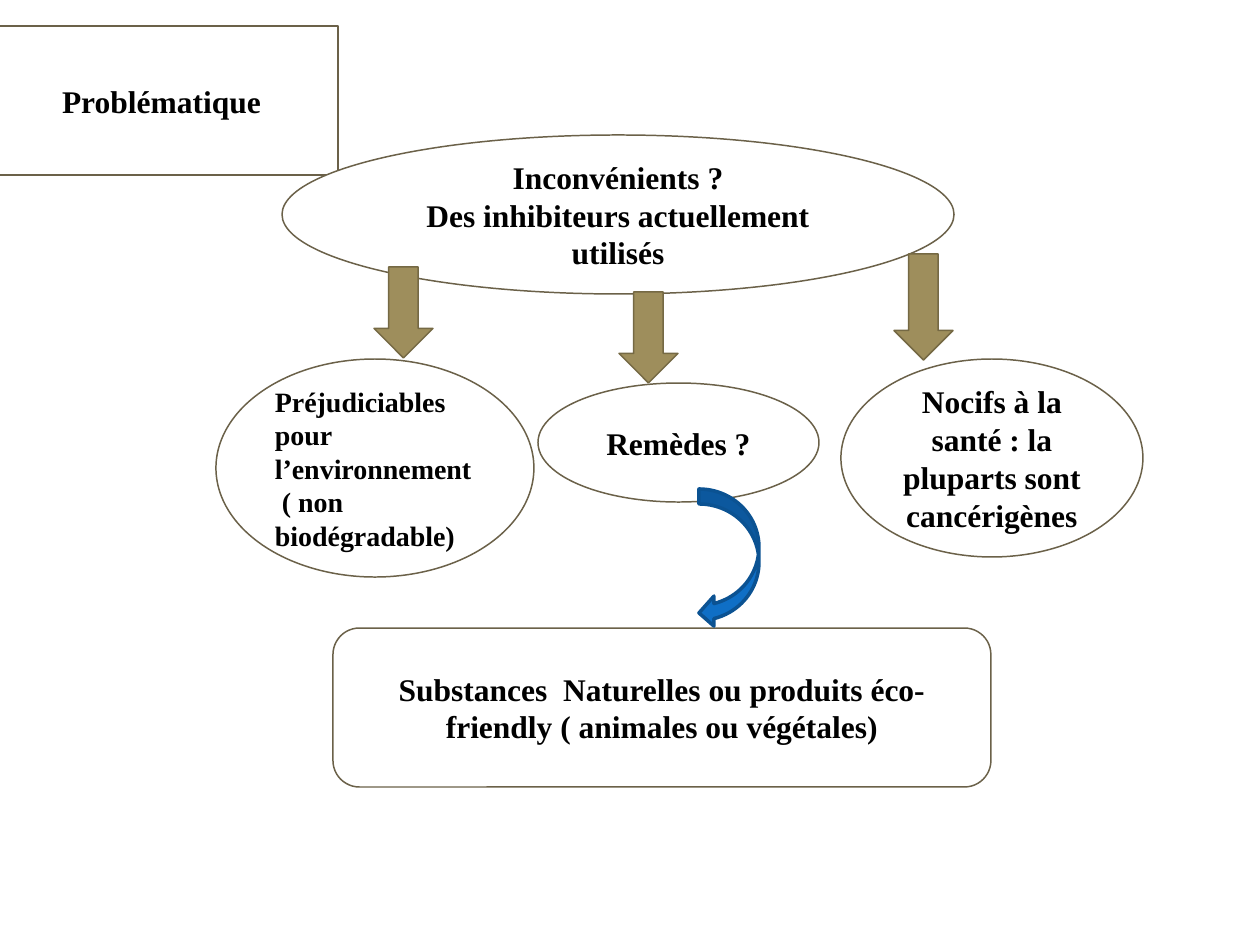
import pptx
import pptx.dml.color
import pptx.enum.shapes
import pptx.enum.text
import pptx.oxml
import pptx.oxml.ns
import pptx.util

EMU_PER_PX = 914400 / 126
FONT = "Times New Roman"
COLORS = {
    "paper": "FFFFFF",
    "ink": "000000",
    "outline": "6B6149",
    "arrow": "9E8E5C",
    "arrow_edge": "756944",
    "curve": "0F6FC6",
    "curve_edge": "0B5292",
}
SHAPES = pptx.enum.shapes.MSO_SHAPE
ALIGN = pptx.enum.text.PP_ALIGN


def px(length):
    return pptx.util.Emu(round(length * EMU_PER_PX))


def rgb(name):
    return pptx.dml.color.RGBColor.from_string(COLORS[name])


def paint(shape, fill="paper", line="outline", width=0.85):
    shape.fill.solid()
    shape.fill.fore_color.rgb = rgb(fill)
    shape.line.color.rgb = rgb(line)
    shape.line.width = pptx.util.Pt(width)


def write(shape, text, size=18, align=ALIGN.CENTER):
    frame = shape.text_frame
    frame.text = text
    frame.word_wrap = True
    frame.auto_size = pptx.enum.text.MSO_AUTO_SIZE.NONE
    frame.vertical_anchor = pptx.enum.text.MSO_ANCHOR.MIDDLE
    for paragraph in frame.paragraphs:
        paragraph.alignment = align
        paragraph.font.name = FONT
        paragraph.font.size = pptx.util.Pt(size)
        paragraph.font.bold = True
        paragraph.font.color.rgb = rgb("ink")


def add_preset(slide, preset, box, **style):
    shape = slide.shapes.add_shape(preset, *map(px, box))
    shape.shadow.inherit = False
    paint(shape, **style)
    return shape


def add_bubble(slide, box, text, preset=SHAPES.OVAL, **text_format):
    write(add_preset(slide, preset, box), text, **text_format)


def place_title(slide, box, text):
    title = slide.shapes.title
    title.left, title.top, title.width, title.height = map(px, box)
    cloud = pptx.oxml.parse_xml(
        f'<a:prstGeom {pptx.oxml.ns.nsdecls("a")} prst="cloud"><a:avLst/></a:prstGeom>'
    )
    title.element.spPr.find(pptx.oxml.ns.qn("a:xfrm")).addnext(cloud)
    paint(title)
    write(title, text)


def add_drawbacks(slide, box):
    left, top, width, height = box
    add_bubble(slide, (left + 66, top, 672, 159),
               "Inconvénients ?\nDes inhibiteurs actuellement utilisés")
    add_bubble(slide, (left, top + 224, 318, 218),
               "Préjudiciables  pour  l’environnement  ( non\nbiodégradable)",
               size=16, align=ALIGN.LEFT)
    add_bubble(slide, (left + width - 302, top + 224, 302, 198),
               "Nocifs à la santé : la pluparts sont cancérigènes")
    add_bubble(slide, (left + 322, top + 248, 281, 119), "Remèdes ?")
    for arrow_left, arrow_top, arrow_height in (
        (678, 119, 106), (403, 157, 91), (158, 132, 91)
    ):
        add_preset(slide, SHAPES.DOWN_ARROW,
                   (left + arrow_left, top + arrow_top, 59, arrow_height),
                   fill="arrow", line="arrow_edge")


def add_solution(slide, box):
    left, top, width, height = box
    add_bubble(slide, box,
               "Substances  Naturelles ou produits éco-friendly ( animales ou végétales)",
               preset=SHAPES.ROUNDED_RECTANGLE)
    add_preset(slide, SHAPES.CURVED_LEFT_ARROW, (left + 366, top - 139, 60, 139),
               fill="curve", line="curve_edge", width=2)


def main():
    deck = pptx.Presentation()
    deck.slide_width, deck.slide_height = px(1260), px(945)
    slide = deck.slides.add_slide(deck.slide_layouts[5])
    place_title(slide, (-15, 26, 353, 149), "Problématique")
    add_drawbacks(slide, (216, 135, 927, 442))
    add_solution(slide, (333, 628, 658, 159))
    deck.save("out.pptx")


if __name__ == "__main__":
    main()
